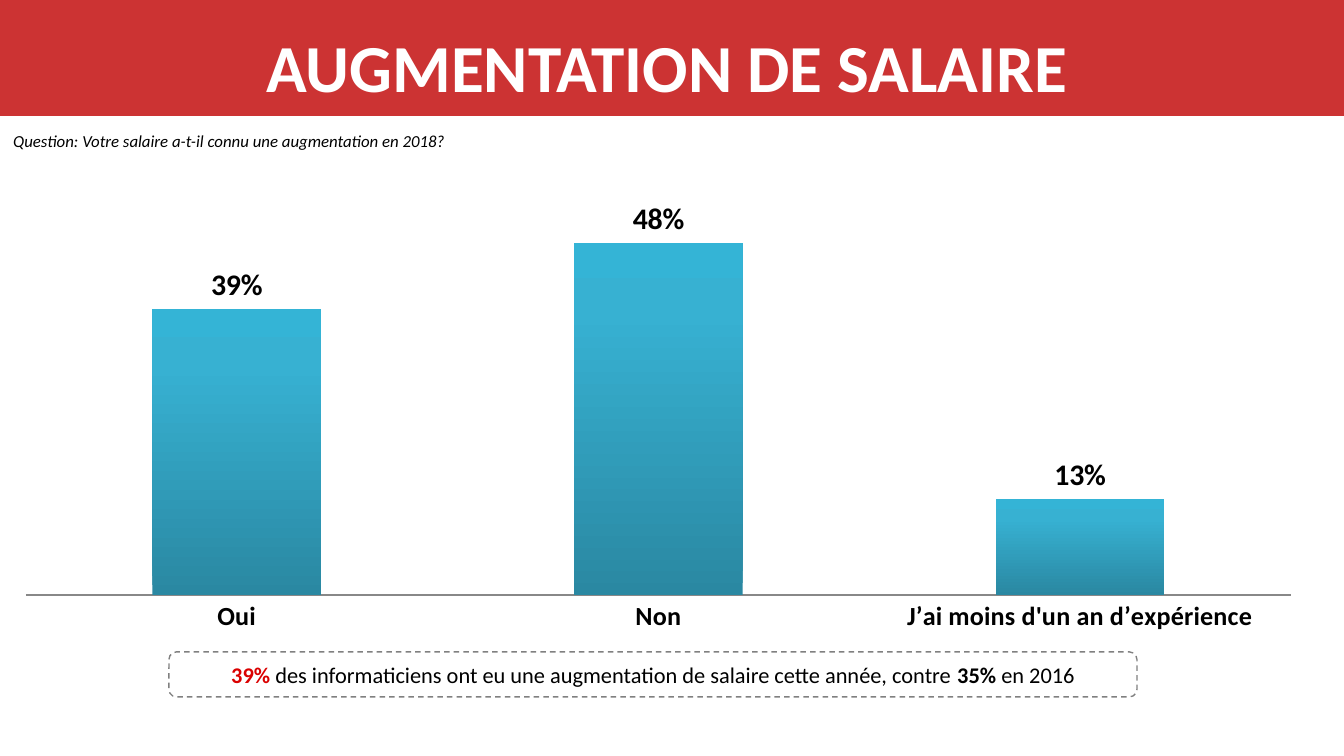
from lxml.etree import SubElement
from pptx import Presentation
from pptx.chart.data import CategoryChartData
from pptx.dml.color import RGBColor
from pptx.enum.chart import XL_CHART_TYPE, XL_LABEL_POSITION, XL_TICK_LABEL_POSITION, XL_TICK_MARK
from pptx.enum.dml import MSO_LINE
from pptx.enum.shapes import MSO_SHAPE
from pptx.enum.text import MSO_ANCHOR, PP_ALIGN
from pptx.oxml import parse_xml
from pptx.oxml.ns import nsdecls, qn
from pptx.util import Emu, Pt

FONT = "Calibri"
COLORS = {"banner": "CC3333", "white": "FFFFFF", "black": "000000", "accent": "DA0000",
          "axis": "888888", "border": "808080"}
BAR_GRADIENT = [(0, "2A88A2"), (80, "37B1D2"), (100, "34B4D6")]

TITLE = "AUGMENTATION DE SALAIRE"
QUESTION = "Question: Votre salaire a-t-il connu une augmentation en 2018?"
ANSWERS = {"Oui": 0.39, "Non": 0.48, "J’ai moins d'un an d’expérience": 0.13}
SUMMARY = [
    ("39% ", {"bold": True, "color": "accent"}),
    ("des informaticiens ont eu une augmentation de salaire cette année, contre ", {}),
    ("35% ", {"bold": True}),
    ("en 2016", {}),
]

SLIDE_SIZE = (1344, 756)
BANNER_BOX = (0, 0, 1344, 116)
TITLE_BOX = (58, 19, 1218, 95)
QUESTION_BOX = (0, 124, 1032, 34)
CHART_BOX = (0, 145, 1317, 497)
PLOT_BOX = (26, 155, 1265, 440)
SUMMARY_BOX = (169, 652, 968, 45)


def px(length):
    return Emu(round(length * 914400 / 134.4))


def place(box):
    return [px(length) for length in box]


def rgb(name):
    return RGBColor.from_string(COLORS[name])


def format_font(font, size, color="black", bold=False, italic=False):
    font.name, font.size, font.bold, font.italic = FONT, Pt(size), bold, italic
    font.color.rgb = rgb(color)


def write(shape, text, align=PP_ALIGN.LEFT, anchor=MSO_ANCHOR.TOP, **style):
    frame = shape.text_frame
    frame.word_wrap = True
    frame.vertical_anchor = anchor
    paragraph = frame.paragraphs[0]
    paragraph.alignment = align
    for words, changes in ([(text, {})] if isinstance(text, str) else text):
        run = paragraph.add_run()
        run.text = words
        format_font(run.font, **{**style, **changes})


def add_plain_shape(slide, kind, box):
    shape = slide.shapes.add_shape(kind, *place(box))
    shape.shadow.inherit = False
    return shape


def set_plot_area(chart):
    left, top, width, height = CHART_BOX
    plot_left, plot_top, plot_width, plot_height = PLOT_BOX
    fractions = {"x": (plot_left - left) / width, "y": (plot_top - top) / height,
                 "w": plot_width / width, "h": plot_height / height}
    plot_area = chart.plots[0]._element.getparent()
    for old in plot_area.findall(qn("c:layout")):
        plot_area.remove(old)
    layout = parse_xml(f"<c:layout {nsdecls('c')}/>")
    manual = SubElement(layout, qn("c:manualLayout"))
    settings = {"layoutTarget": "inner", "xMode": "edge", "yMode": "edge", **fractions}
    for name, value in settings.items():
        SubElement(manual, qn(f"c:{name}")).set("val", str(value))
    plot_area.insert(0, layout)


def set_gradient(fill):
    fill.gradient()
    fill.gradient_angle = 90
    stops = fill.gradient_stops[0]._gs.getparent()
    for stop in list(stops):
        stops.remove(stop)
    for position, color in BAR_GRADIENT:
        stop = SubElement(stops, qn("a:gs"), pos=str(position * 1000))
        SubElement(stop, qn("a:srgbClr"), val=color)


def add_answer_chart(slide):
    data = CategoryChartData(number_format="0%")
    data.categories = list(ANSWERS)
    data.add_series("Series 1", list(ANSWERS.values()))
    chart = slide.shapes.add_chart(XL_CHART_TYPE.COLUMN_CLUSTERED, *place(CHART_BOX), data).chart
    chart.has_legend = False
    chart.has_title = False
    format_font(chart.font, 18)

    category_axis = chart.category_axis
    category_axis.major_tick_mark = XL_TICK_MARK.NONE
    category_axis.tick_label_position = XL_TICK_LABEL_POSITION.NEXT_TO_AXIS
    category_axis.format.line.color.rgb = rgb("axis")
    category_axis.format.line.width = Pt(0.75)
    format_font(category_axis.tick_labels.font, 14, bold=True)

    value_axis = chart.value_axis
    value_axis.minimum_scale, value_axis.maximum_scale = 0, 0.6
    value_axis.has_major_gridlines = False
    value_axis.tick_labels.number_format = "0%"
    value_axis.tick_labels.number_format_is_linked = False
    value_axis.visible = False

    plot = chart.plots[0]
    plot.gap_width, plot.overlap = 150, -25
    plot.vary_by_categories = False
    set_gradient(plot.series[0].format.fill)
    labels = plot.series[0].data_labels
    labels.show_value = True
    labels.number_format = "0%"
    labels.number_format_is_linked = False
    labels.position = XL_LABEL_POSITION.OUTSIDE_END
    format_font(labels.font, 16, bold=True)
    set_plot_area(chart)


def main():
    presentation = Presentation()
    presentation.slide_width, presentation.slide_height = place(SLIDE_SIZE)
    slide = presentation.slides.add_slide(presentation.slide_layouts[5])

    banner = add_plain_shape(slide, MSO_SHAPE.RECTANGLE, BANNER_BOX)
    banner.fill.solid()
    banner.fill.fore_color.rgb = rgb("banner")
    banner.line.fill.background()
    slide.shapes._spTree.insert(2, banner._element)

    title = slide.shapes.title
    title.left, title.top, title.width, title.height = place(TITLE_BOX)
    write(title, TITLE, align=PP_ALIGN.CENTER, size=36, color="white", bold=True)

    add_answer_chart(slide)

    question = slide.shapes.add_textbox(*place(QUESTION_BOX))
    write(question, QUESTION, size=9, italic=True)

    summary = add_plain_shape(slide, MSO_SHAPE.ROUNDED_RECTANGLE, SUMMARY_BOX)
    summary.fill.background()
    summary.line.color.rgb = rgb("border")
    summary.line.width = Pt(0.75)
    summary.line.dash_style = MSO_LINE.DASH
    write(summary, SUMMARY, align=PP_ALIGN.CENTER, anchor=MSO_ANCHOR.MIDDLE, size=12)

    presentation.save("out.pptx")


if __name__ == "__main__":
    main()
